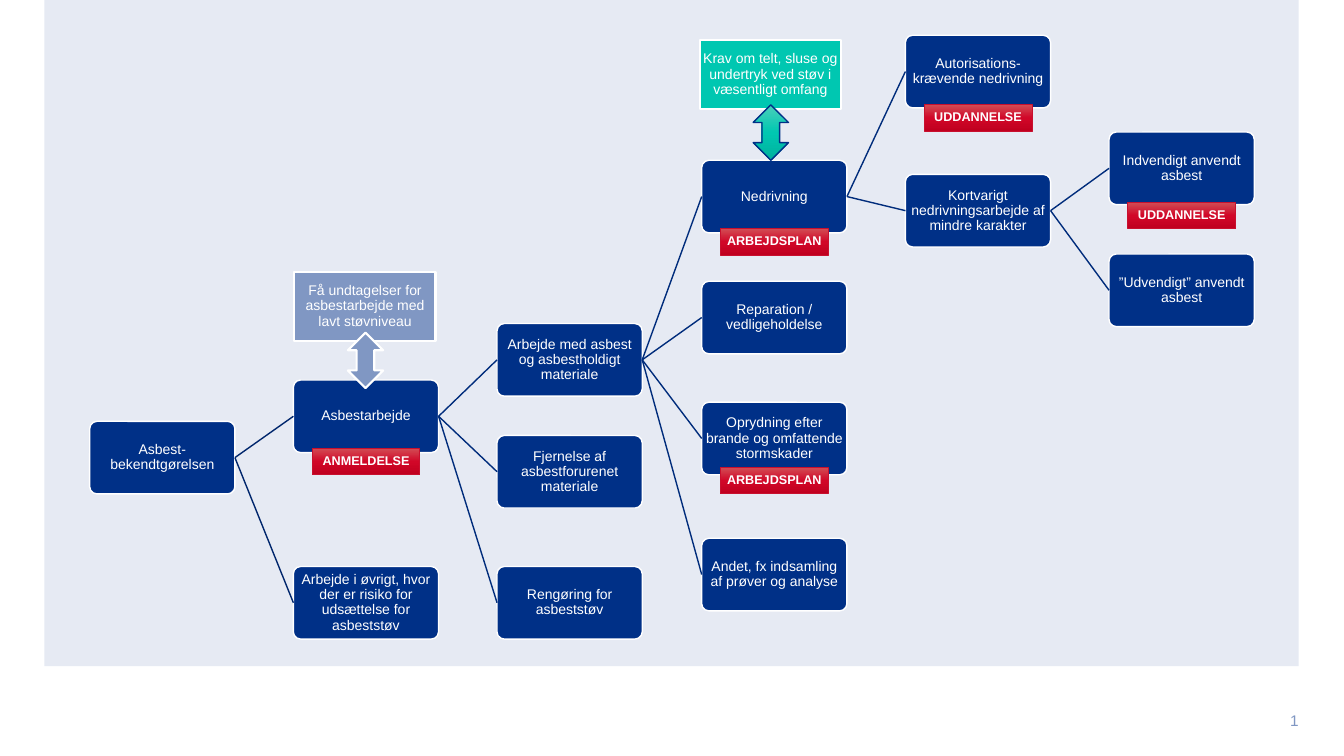
"""Build a slide with a decision tree of asbestos work and its legal duties."""
from copy import deepcopy

from pptx import Presentation
from pptx import util as u
from pptx.dml import color
from pptx.enum import shapes, text
from pptx.oxml import ns, xmlchemy

NAVY, WHITE, STEEL, TEAL = "003087", "FFFFFF", "8097C3", "00C7B1"
RED_FADE = ("D24C54", "D10728", "C0001F")
TEAL_FADE = ("4BCFBA", TEAL, "00B19D")

COLUMNS = [0.89, 2.91, 4.93, 6.96, 8.98, 11]
NODE_W, NODE_H = 1.44, 0.72
TAG_W, TAG_H = 1.07, 0.26
NOTE_W, NOTE_H = 1.4, 0.68
ARROW_W, ARROW_H = 0.35, 0.55

# key: (parent, column, top, wording)
NODES = {
    "order": (None, 0, 4.18, "Asbest-bekendtgørelsen"),
    "work": ("order", 1, 3.77, "Asbestarbejde"),
    "other": ("order", 1, 5.62, "Arbejde i øvrigt, hvor der er risiko for udsættelse for asbeststøv"),
    "material": ("work", 2, 3.21, "Arbejde med asbest og asbestholdigt materiale"),
    "removal": ("work", 2, 4.32, "Fjernelse af asbestforurenet materiale"),
    "cleaning": ("work", 2, 5.62, "Rengøring for asbeststøv"),
    "demolition": ("material", 3, 1.59, "Nedrivning"),
    "repair": ("material", 3, 2.79, "Reparation / vedligeholdelse"),
    "clearing": ("material", 3, 3.99, "Oprydning efter brande og omfattende stormskader"),
    "samples": ("material", 3, 5.34, "Andet, fx indsamling af prøver og analyse"),
    "authorised": ("demolition", 4, 0.35, "Autorisations-krævende nedrivning"),
    "brief": ("demolition", 4, 1.73, "Kortvarigt nedrivningsarbejde af mindre karakter"),
    "indoor": ("brief", 5, 1.31, "Indvendigt anvendt asbest"),
    "outdoor": ("brief", 5, 2.52, "”Udvendigt” anvendt asbest"),
}
# (node, top, wording)
TAGS = [
    ("work", 4.45, "ANMELDELSE"),
    ("demolition", 2.27, "ARBEJDSPLAN"),
    ("indoor", 2.01, "UDDANNELSE"),
    ("authorised", 1.04, "UDDANNELSE"),
    ("clearing", 4.64, "ARBEJDSPLAN"),
]
# (left, top, fill, wording)
NOTES = [
    (2.92, 2.7, STEEL, "Få undtagelser for asbestarbejde med lavt støvniveau"),
    (6.94, 0.4, TEAL, "Krav om telt, sluse og undertryk ved støv i væsentligt omfang"),
]
# (left, top, fill, line colour, line width)
ARROWS = [(3.45, 3.3, STEEL, WHITE, 1.5), (7.47, 1.04, TEAL_FADE, NAVY, 1)]


def rgb(value):
    return color.RGBColor.from_string(value)


def assign(target, values):
    for name, value in values.items():
        setattr(target, name, value)


def paint(shape, fill):
    if isinstance(fill, str):
        shape.fill.solid()
        shape.fill.fore_color.rgb = rgb(fill)
        return
    shape.fill.gradient()
    shape.fill.gradient_angle = 270
    stops = shape._element.spPr.find(ns.qn("a:gradFill")).find(ns.qn("a:gsLst"))
    stops.append(deepcopy(stops[0]))
    for stop, position, shade in zip(shape.fill.gradient_stops, (0, 0.5, 1), fill):
        stop.position = position
        stop.color.rgb = rgb(shade)


def add_block(slide, kind, box, fill, line=None, width=1):
    block = slide.shapes.add_shape(kind, *map(u.Inches, box))
    block.shadow.inherit = False
    paint(block, fill)
    if line:
        block.line.color.rgb = rgb(line)
        block.line.width = u.Pt(width)
    else:
        block.line.fill.background()
    return block


def write(shape, wording, size=10, bold=False, ink=WHITE, inset=0.01,
          align=text.PP_ALIGN.CENTER, spacing=0.9):
    frame = shape.text_frame
    margins = {f"margin_{side}": u.Inches(inset) for side in ("left", "right", "top", "bottom")}
    assign(frame, {"word_wrap": True, "vertical_anchor": text.MSO_ANCHOR.MIDDLE, **margins})
    paragraph = frame.paragraphs[0]
    assign(paragraph, {"alignment": align, "line_spacing": spacing})
    run = paragraph.add_run()
    run.text = wording
    assign(run.font, {"name": "Arial", "size": u.Pt(size), "bold": bold})
    run.font.color.rgb = rgb(ink)
    return run


def add_branch(slide, parent, child, ink):
    branch = slide.shapes.add_connector(shapes.MSO_CONNECTOR.STRAIGHT, 0, 0, 0, 0)
    branch.begin_connect(parent, 3)
    branch.end_connect(child, 1)
    branch.line.color.rgb = rgb(ink)
    branch.line.width = u.Pt(1)
    branch._element.spPr.append(xmlchemy.OxmlElement("a:effectLst"))


def add_page_number(slide):
    number = slide.shapes.add_textbox(*map(u.Inches, (12.44, 7.08, 0.44, 0.14)))
    run = write(number, "1", 11, ink=STEEL, inset=0, align=text.PP_ALIGN.RIGHT, spacing=1.0)
    field = xmlchemy.OxmlElement("a:fld")
    field.set("id", "{B6F15528-21DE-4FAA-801E-634DDDAF4B2B}")
    field.set("type", "slidenum")
    run._r.addprevious(field)
    field.extend(list(run._r))
    field.getparent().remove(run._r)


def main():
    deck = Presentation()
    assign(deck, {"slide_width": u.Inches(13.33), "slide_height": u.Inches(7.5)})
    slide = deck.slides.add_slide(deck.slide_layouts[6])
    kinds = shapes.MSO_SHAPE
    add_block(slide, kinds.RECTANGLE, (0.44, 0, 12.44, 6.61), "E6EAF3")

    nodes = {}
    for key, (parent, column, top, wording) in NODES.items():
        box = (COLUMNS[column], top, NODE_W, NODE_H)
        nodes[key] = add_block(slide, kinds.ROUNDED_RECTANGLE, box, NAVY, WHITE)
        nodes[key].adjustments[0] = 0.1
        write(nodes[key], wording)
        if parent:
            add_branch(slide, nodes[parent], nodes[key], "00266C" if parent == "order" else "002C7B")

    add_page_number(slide)
    for key, top, wording in TAGS:
        left = COLUMNS[NODES[key][1]] + (NODE_W - TAG_W) / 2
        tag = add_block(slide, kinds.RECTANGLE, (left, top, TAG_W, TAG_H), RED_FADE, "C8102E", 0.5)
        write(tag, wording, 9, bold=True)
    for left, top, fill, wording in NOTES:
        note = add_block(slide, kinds.RECTANGLE, (left, top, NOTE_W, NOTE_H), fill, WHITE, 1.5)
        write(note, wording)
    for left, top, fill, line, width in ARROWS:
        add_block(slide, kinds.UP_DOWN_ARROW, (left, top, ARROW_W, ARROW_H), fill, line, width)
    deck.save("out.pptx")


if __name__ == "__main__":
    main()
